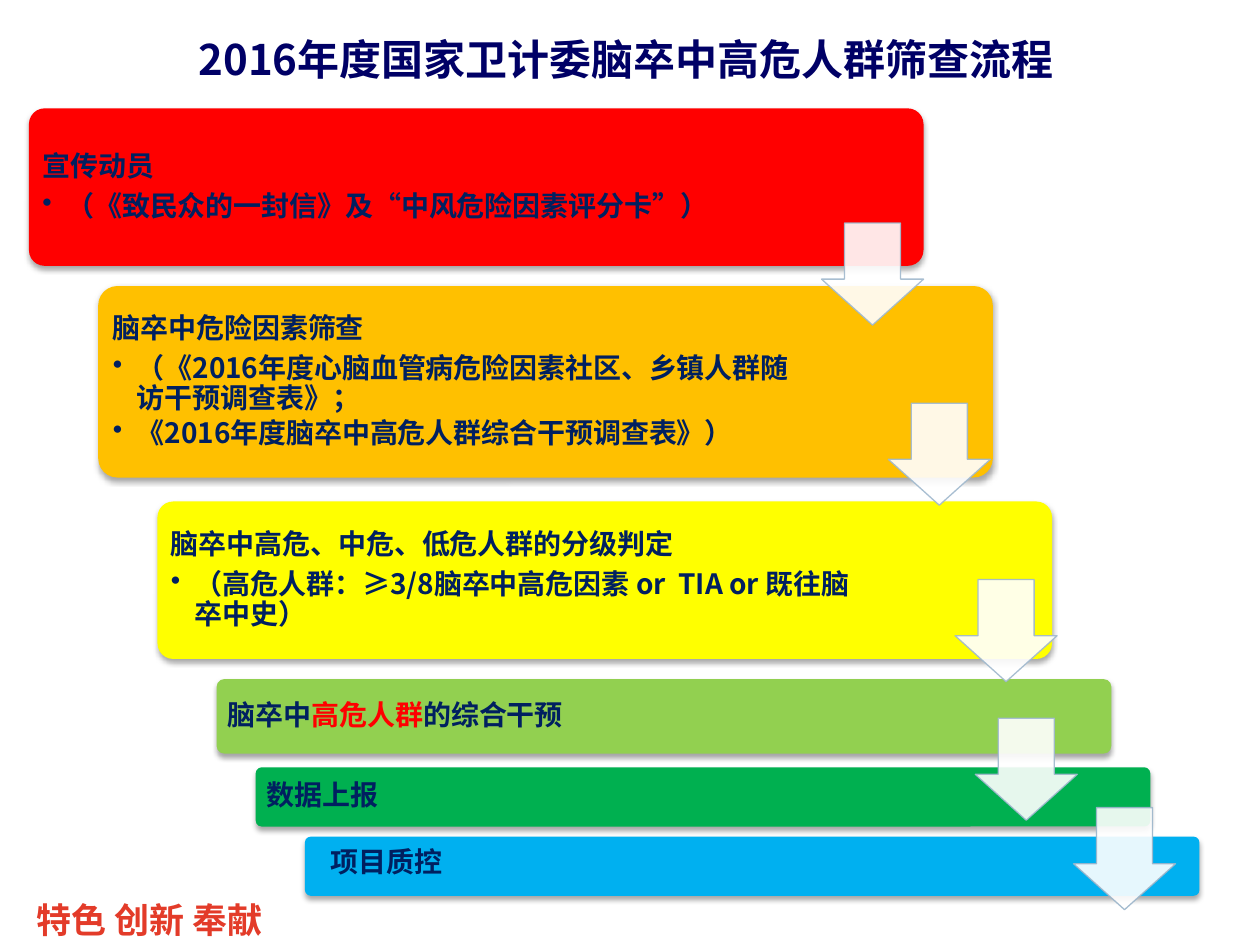
"""Build the stroke high-risk screening workflow slide."""
from lxml.etree import SubElement
from pptx import Presentation
from pptx.dml.color import RGBColor
from pptx.enum.shapes import MSO_SHAPE as SHAPE
from pptx.enum.text import MSO_ANCHOR as ANCHOR, PP_ALIGN as ALIGN
from pptx.oxml.ns import qn
from pptx.util import Inches, Pt

FONT = "Noto Sans CJK SC"
NAVY, RED = "002060", "FF0000"
TITLE = "2016年度国家卫计委脑卒中高危人群筛查流程"
MOTTO = "特色 创新 奉献"
STEP_W, TEXT_W, ARROW = 7.1, 5.67, 0.81

# left, top, height, fill, text offset, heading runs, bullets
STEPS = [
    (0.23, 0.86, 1.25, RED, (0, 0), [("宣传动员", NAVY)],
     ["（《致民众的一封信》及“中风危险因素评分卡”）"]),
    (0.78, 2.27, 1.52, "FFC000", (0, 0), [("脑卒中危险因素筛查", NAVY)],
     ["（《2016年度心脑血管病危险因素社区、乡镇人群随访干预调查表》；",
      "《2016年度脑卒中高危人群综合干预调查表》）"]),
    (1.25, 3.98, 1.25, "FFFF00", (0, 0), [("脑卒中高危、中危、低危人群的分级判定", NAVY)],
     ["（高危人群：≥3/8脑卒中高危因素 or  TIA or 既往脑卒中史）"]),
    (1.72, 5.39, 0.59, "92D050", (0, 0),
     [("脑卒中", NAVY), ("高危人群", RED), ("的综合干预", NAVY)], []),
    (2.03, 6.09, 0.47, "00B050", (0, 0), [("数据上报", NAVY)], []),
    (2.42, 6.64, 0.47, "00B0F0", (0.12, -0.02), [("项目质控", NAVY)], []),
]
ARROWS = [
    (6.52, 1.77, "9FB8CD"),
    (7.05, 3.2, "9FB8CD"),
    (7.58, 4.6, "9FB8CD"),
    (7.74, 5.7, "9FB8CD"),
    (8.52, 6.41, "9AB4CA"),
]


def rgb(code):
    return RGBColor.from_string(code)


def add_box(s, x, y, w, h, anchor=ANCHOR.MIDDLE, inset=0.07):
    tf = s.shapes.add_textbox(*map(Inches, (x, y, w, h))).text_frame
    tf.word_wrap = True
    tf.vertical_anchor = anchor
    tf.margin_left = tf.margin_right = Inches(inset)
    tf.margin_top = tf.margin_bottom = Inches(0.07)
    return tf


def write(p, runs, size=16, align=ALIGN.LEFT, spacing=None, after=0, bullet=False):
    if bullet:
        pPr = p._p.get_or_add_pPr()
        pPr.set("marL", str(Inches(0.19)))
        pPr.set("indent", str(-Inches(0.19)))
        SubElement(pPr, qn("a:buChar"), char="•")
    p.alignment = align
    p.line_spacing = spacing
    p.space_after = Pt(after)
    for text, color in runs:
        r = p.add_run()
        r.text = text
        r.font.size, r.font.bold, r.font.name = Pt(size), True, FONT
        r.font.color.rgb = rgb(color)
        SubElement(r._r.get_or_add_rPr(), qn("a:ea"), typeface=FONT)


def add_shape(s, kind, x, y, w, h, fill, adjustments):
    sp = s.shapes.add_shape(kind, *map(Inches, (x, y, w, h)))
    sp.shadow.inherit = False
    sp.fill.solid()
    sp.fill.fore_color.rgb = rgb(fill)
    for i, value in enumerate(adjustments):
        sp.adjustments[i] = value
    return sp


def set_alpha(parent, percent):
    for color in parent.iter(qn("a:srgbClr")):
        SubElement(color, qn("a:alpha"), val=str(percent * 1000))


def add_step(s, x, y, h, fill, offset, heading, bullets):
    sp = add_shape(s, SHAPE.ROUNDED_RECTANGLE, x, y, STEP_W, h, fill, [0.1])
    sp.line.fill.background()
    effects = sp._element.spPr.find(qn("a:effectLst"))
    shadow = SubElement(effects, qn("a:outerShdw"), blurRad=str(Pt(3.1)),
                        dist=str(Pt(1.8)), dir="5400000", rotWithShape="0")
    SubElement(shadow, qn("a:srgbClr"), val="000000")
    set_alpha(shadow, 35)

    edge = 0.03 * h
    dx, dy = offset
    tf = add_box(s, x + edge + dx, y + edge + dy, TEXT_W, h - 2 * edge)
    write(tf.paragraphs[0], heading, spacing=0.9, after=5.6)
    for text in bullets:
        write(tf.add_paragraph(), [(text, NAVY)], spacing=0.9, after=2.4, bullet=True)


def add_arrow(s, x, y, line):
    sp = add_shape(s, SHAPE.DOWN_ARROW, x, y, ARROW, ARROW, "FFFFFF", [0.55, 0.45])
    sp.line.color.rgb = rgb(line)
    sp.line.width = Pt(0.75)
    set_alpha(sp._element.spPr, 90)


def main():
    prs = Presentation()
    prs.slide_width, prs.slide_height = Inches(10), Inches(7.5)
    s = prs.slides.add_slide(prs.slide_layouts[6])
    motto = add_box(s, 0.19, 7.06, 4.03, 0.44, anchor=ANCHOR.TOP, inset=0.1)
    write(motto.paragraphs[0], [(MOTTO, "E33B29")], size=20)
    title = add_box(s, 0.47, -0.16, 9, 1.25, inset=0.1)
    write(title.paragraphs[0], [(TITLE, "000066")], size=24, align=ALIGN.CENTER)
    for step in STEPS:
        add_step(s, *step)
    for arrow in ARROWS:
        add_arrow(s, *arrow)
    prs.save("out.pptx")


if __name__ == "__main__":
    main()
